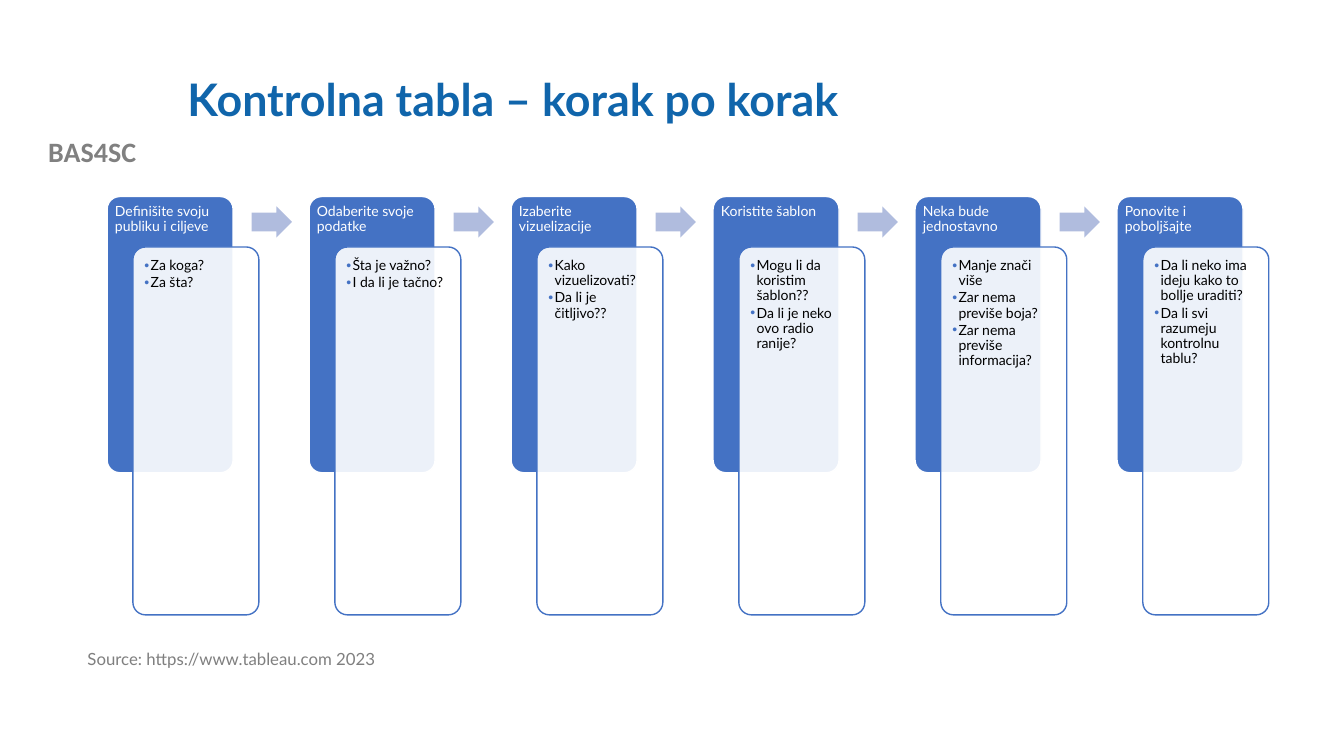
"""Build the slide of dashboard steps, from audience to improvement."""
from lxml.etree import SubElement
from pptx import Presentation
from pptx.dml.color import RGBColor
from pptx.enum.shapes import MSO_SHAPE
from pptx.enum.text import MSO_ANCHOR, PP_ALIGN
from pptx.oxml.ns import qn
from pptx.util import Pt

TITLE = "Kontrolna tabla – korak po korak"
PROJECT = "BAS4SC"
SOURCE = "Source: https://www.tableau.com 2023"
STEPS = [
    ("Definišite svoju publiku i ciljeve", ["Za koga?", "Za šta?"]),
    ("Odaberite svoje podatke", ["Šta je važno?", "I da li je tačno?"]),
    ("Izaberite vizuelizacije", ["Kako vizuelizovati?", "Da li je čitljivo??"]),
    ("Koristite šablon", ["Mogu li da koristim šablon??",
                          "Da li je neko ovo radio ranije?"]),
    ("Neka bude jednostavno", ["Manje znači više", "Zar nema previše boja?",
                               "Zar nema previše informacija?"]),
    ("Ponovite i poboljšajte", ["Da li neko ima ideju kako to bollje uraditi?",
                                "Da li svi razumeju kontrolnu tablu?"]),
]

BLUE, PALE_BLUE, WHITE = "4472C4", "B0BCDE", "FFFFFF"
TITLE_FONT = {"name": "Lato", "size": Pt(32), "bold": True, "color": "1065AB"}
PROJECT_FONT = {"name": "Calibri", "size": Pt(20), "bold": True, "color": "808080"}
SOURCE_FONT = {"name": "Lato", "size": Pt(12), "color": "7F7F7F"}
HEADING_FONT = {"name": "Lato", "size": Pt(10), "color": WHITE}
QUESTION_FONT = {"name": "Lato", "size": Pt(10), "color": "000000"}
TIGHT = {"line_spacing": 0.9, "alignment": PP_ALIGN.LEFT}
CENTRED = {"alignment": PP_ALIGN.CENTER}

STEP_LEFT, STEP_TOP, STEP_PITCH = 76.5, 140.4, 144.28
CARD_WIDTH, HEADING_HEIGHT, QUESTIONS_HEIGHT = 90, 197.3, 262.8
QUESTIONS_RIGHT, QUESTIONS_DOWN = 18.4, 36
ARROW_RIGHT, ARROW_DOWN, ARROW_WIDTH, ARROW_HEIGHT = 103.3, 7, 28.8, 22.4
HEADING_MARGIN, QUESTIONS_MARGIN = 3, 5.6
BULLET_INDENT = 4.5


def rgb(value):
    return RGBColor.from_string(value)


def set_values(target, values):
    for name, value in values.items():
        if name == "color":
            target.color.rgb = rgb(value)
        else:
            setattr(target, name, value)


def add_bullet(para):
    properties = para._p.get_or_add_pPr()
    properties.set("marL", str(Pt(BULLET_INDENT)))
    properties.set("indent", str(-Pt(BULLET_INDENT)))
    color = SubElement(properties, qn("a:buClr"))
    SubElement(color, qn("a:srgbClr"), val=BLUE)
    SubElement(properties, qn("a:buFont"), typeface="Arial")
    SubElement(properties, qn("a:buChar"), char="•")


def write(frame, lines, font, layout, bulleted=False):
    frame.word_wrap = True
    for number, line in enumerate(lines):
        para = frame.add_paragraph() if number else frame.paragraphs[0]
        set_values(para, layout)
        if bulleted:
            para.space_after = Pt(1.5)
            add_bullet(para)
        span = para.add_run()
        span.text = line
        set_values(span.font, font)


def add_label(page, place, text, font, layout):
    box = page.shapes.add_textbox(*map(Pt, place))
    write(box.text_frame, [text], font, layout)


def add_block(page, kind, place, adjustments, fill, line=None):
    block = page.shapes.add_shape(kind, *map(Pt, place))
    for number, value in enumerate(adjustments):
        block.adjustments[number] = value
    block.shadow.inherit = False
    block.fill.solid()
    block.fill.fore_color.rgb = rgb(fill)
    if line:
        block.line.color.rgb = rgb(line)
        block.line.width = Pt(1)
    else:
        block.line.fill.background()
    return block


def add_card(page, place, fill, line, margin):
    card = add_block(page, MSO_SHAPE.ROUNDED_RECTANGLE, place, [0.1], fill, line)
    frame = card.text_frame
    frame.vertical_anchor = MSO_ANCHOR.TOP
    for side in ("left", "top", "right", "bottom"):
        setattr(frame, f"margin_{side}", Pt(margin))
    return card


def add_step(page, left, heading, questions):
    card = add_card(page, (left, STEP_TOP, CARD_WIDTH, HEADING_HEIGHT),
                    BLUE, WHITE, HEADING_MARGIN)
    write(card.text_frame, [heading], HEADING_FONT, TIGHT)
    place = (left + QUESTIONS_RIGHT, STEP_TOP + QUESTIONS_DOWN,
             CARD_WIDTH, QUESTIONS_HEIGHT)
    card = add_card(page, place, WHITE, BLUE, QUESTIONS_MARGIN)
    color = card.element.spPr.find(qn("a:solidFill")).find(qn("a:srgbClr"))
    SubElement(color, qn("a:alpha"), val="90000")
    write(card.text_frame, questions, QUESTION_FONT, TIGHT, bulleted=True)


def main():
    deck = Presentation()
    deck.slide_width, deck.slide_height = Pt(960), Pt(540)
    page = deck.slides.add_slide(deck.slide_layouts[5])

    title = page.shapes.title
    set_values(title, {"left": Pt(126.7), "top": Pt(28.8),
                       "width": Pt(767.5), "height": Pt(87.8)})
    title.text_frame.vertical_anchor = MSO_ANCHOR.MIDDLE
    write(title.text_frame, [TITLE], TITLE_FONT, TIGHT)
    add_label(page, (0, 92.2, 131.8, 31.7), PROJECT, PROJECT_FONT, CENTRED)
    add_label(page, (55.4, 461.5, 360.7, 37.4), SOURCE, SOURCE_FONT, TIGHT)

    for number, (heading, questions) in enumerate(STEPS):
        left = STEP_LEFT + number * STEP_PITCH
        add_step(page, left, heading, questions)
        if number < len(STEPS) - 1:
            place = (left + ARROW_RIGHT, STEP_TOP + ARROW_DOWN,
                     ARROW_WIDTH, ARROW_HEIGHT)
            add_block(page, MSO_SHAPE.RIGHT_ARROW, place, [0.6, 0.5], PALE_BLUE)

    deck.save("out.pptx")


if __name__ == "__main__":
    main()
